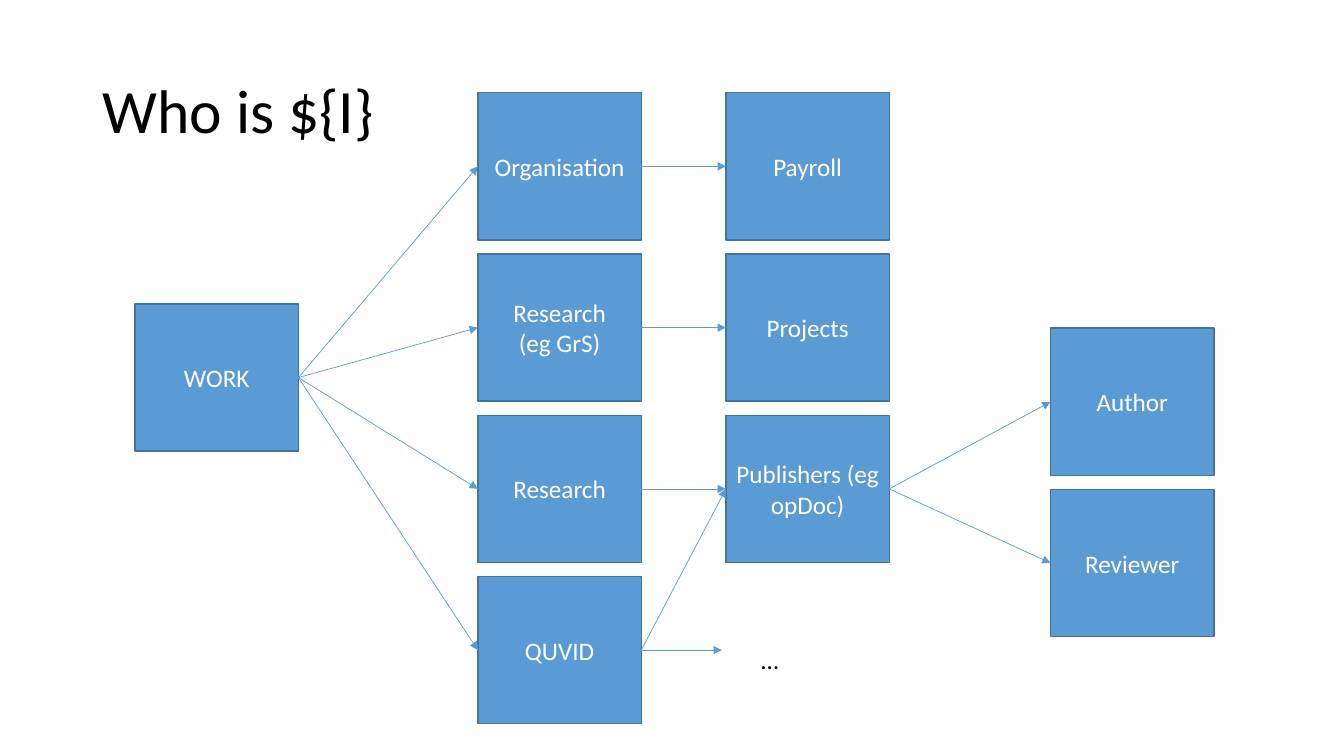
from lxml import etree
from pptx import Presentation
from pptx.dml.color import RGBColor
from pptx.enum.shapes import MSO_CONNECTOR, MSO_SHAPE
from pptx.enum.text import MSO_ANCHOR, PP_ALIGN
from pptx.oxml.ns import qn
from pptx.util import Inches, Pt

RECT = MSO_SHAPE.RECTANGLE
STRAIGHT = MSO_CONNECTOR.STRAIGHT
MIDDLE = MSO_ANCHOR.MIDDLE
CENTER = PP_ALIGN.CENTER

FONT = "Calibri"
BLUE, BORDER, WHITE, BLACK = "5B9BD5", "43739E", "FFFFFF", "000000"
COLUMNS = (1.34, 4.74, 7.2, 10.42)
TOP, ROW_STEP = 0.92, 1.6
BOX_W, BOX_H = 1.62, 1.46
LEFT_SITE, RIGHT_SITE = 1, 3

# key: (column, row, text); rows may be fractional
BOXES = {
    "work": (0, 1.31, "WORK"),
    "organisation": (1, 0, "Organisation"),
    "grants": (1, 1, "Research\n(eg GrS)"),
    "research": (1, 2, "Research"),
    "registry": (1, 3, "QUVID"),
    "payroll": (2, 0, "Payroll"),
    "projects": (2, 1, "Projects"),
    "publishers": (2, 2, "Publishers (eg opDoc)"),
    "author": (3, 1.46, "Author"),
    "reviewer": (3, 2.46, "Reviewer"),
}
LINKS = {
    "work": ("organisation", "grants", "research", "registry"),
    "organisation": ("payroll",),
    "grants": ("projects",),
    "research": ("publishers",),
    "registry": ("publishers",),
    "publishers": ("author", "reviewer"),
}


def rgb(color):
    return RGBColor.from_string(color)


def write(tf, text, size, color, align=None, spacing=None):
    tf.text = text
    for p in tf.paragraphs:
        p.font.name, p.font.size = FONT, Pt(size)
        p.font.color.rgb = rgb(color)
        p.alignment = align
        p.line_spacing = spacing


def add_label(s, x, y, w, h, text, size, wrap=True, **style):
    tf = s.shapes.add_textbox(*map(Inches, (x, y, w, h))).text_frame
    tf.word_wrap = wrap
    write(tf, text, size, BLACK, **style)
    return tf


def add_box(s, column, row, text):
    sp = s.shapes.add_shape(RECT, Inches(COLUMNS[column]), Inches(TOP + row * ROW_STEP),
                            Inches(BOX_W), Inches(BOX_H))
    sp.shadow.inherit = False
    sp.fill.solid()
    sp.fill.fore_color.rgb = rgb(BLUE)
    sp.line.color.rgb = rgb(BORDER)
    sp.line.width = Pt(1)
    sp.text_frame.word_wrap = True
    sp.text_frame.vertical_anchor = MIDDLE
    write(sp.text_frame, text, 18, WHITE, CENTER)
    return sp


def add_arrow(s, source, target=None, length=0):
    """Arrow from the right of source to the left of target, or straight on for length."""
    x, y = source.left + source.width, source.top + source.height // 2
    cxn = s.shapes.add_connector(STRAIGHT, x, y, x + Inches(length), y)
    cxn.begin_connect(source, RIGHT_SITE)
    if target is not None:
        cxn.end_connect(target, LEFT_SITE)
    cxn.line.color.rgb = rgb(BLUE)
    cxn.line.width = Pt(0.5)
    etree.SubElement(cxn.line._get_or_add_ln(), qn("a:tailEnd"), type="triangle")
    etree.SubElement(cxn._element.spPr, qn("a:effectLst"))


def main():
    prs = Presentation()
    prs.slide_width, prs.slide_height = Inches(13.33), Inches(7.5)
    s = prs.slides.add_slide(prs.slide_layouts[6])

    title = add_label(s, 0.92, 0.4, 11.5, 1.45, "Who is ${I}", 44, spacing=0.9)
    title.vertical_anchor = MIDDLE
    boxes = {key: add_box(s, *box) for key, box in BOXES.items()}
    for source, targets in LINKS.items():
        for target in targets:
            add_arrow(s, boxes[source], boxes[target])
    add_arrow(s, boxes["registry"], length=0.8)
    add_label(s, 7.45, 6.34, 0.38, 0.4, "…", 18, wrap=False)

    prs.save("out.pptx")


if __name__ == "__main__":
    main()
